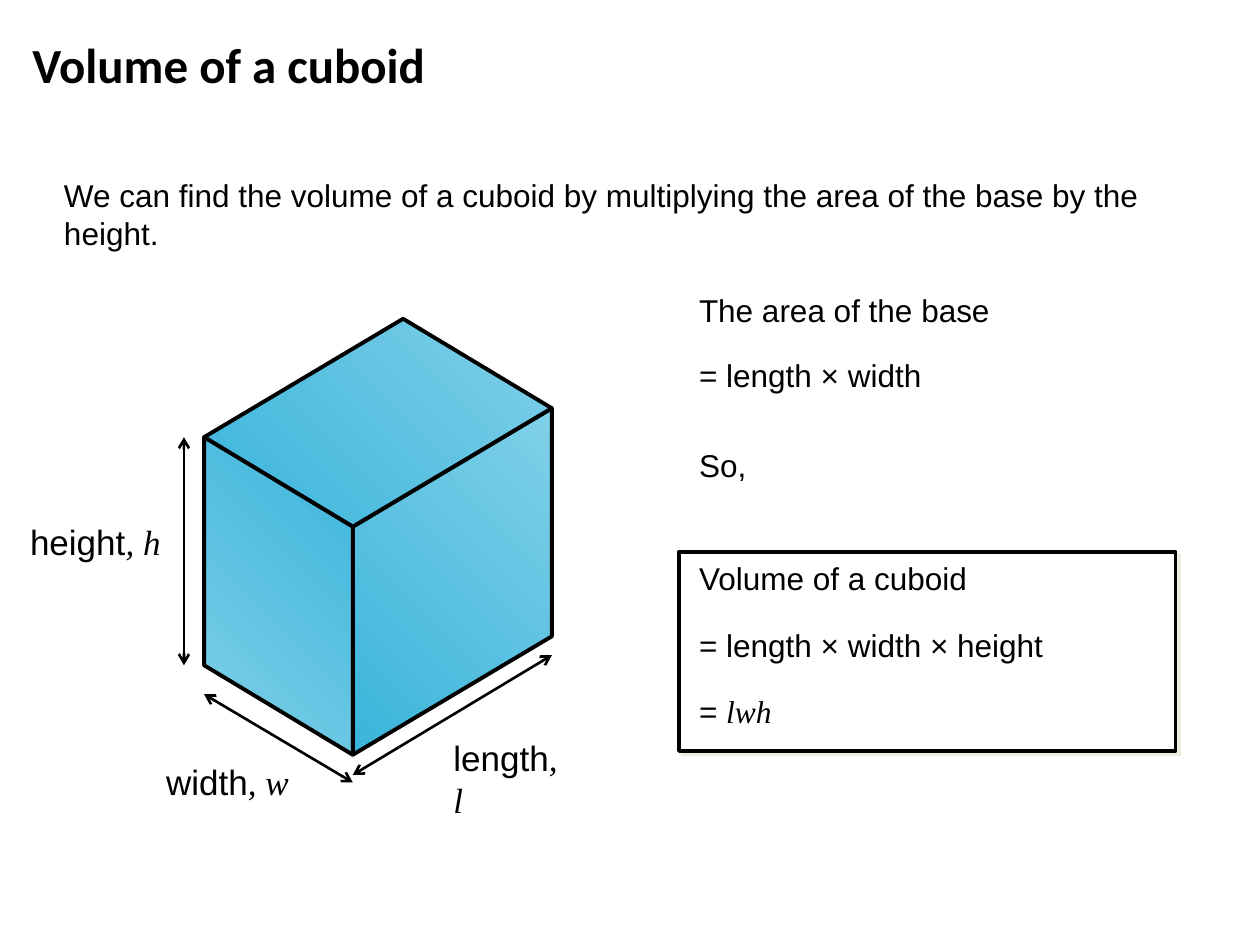
from pptx import Presentation
from pptx.dml.color import RGBColor
from pptx.enum.shapes import MSO_CONNECTOR as Connector, MSO_SHAPE as Shape
from pptx.enum.text import MSO_ANCHOR as Anchor
from pptx.util import Inches, Pt
from lxml.etree import SubElement
from pptx.oxml.ns import qn

COLORS = {"ink": "000000", "paper": "FFFFFF", "shadow": "EEECE1", "deep": "39B4DB", "pale": "80D0E8"}


class CuboidSlide:
    """Holds the style and the current slide, and draws each kind of element."""

    body_font = "Arial"
    math_font = "Times New Roman"
    title_font = "Calibri"

    def __init__(self, presentation):
        self.slide = presentation.slides.add_slide(presentation.slide_layouts[6])

    def color(self, name):
        return RGBColor.from_string(COLORS[name])

    def outline(self, shape, width):
        shape.line.color.rgb = self.color("ink")
        shape.line.width = Pt(width)

    def text(self, box, words, variables="", size=18, font=body_font, bold=False, wrap=True, anchor=Anchor.TOP):
        frame = self.slide.shapes.add_textbox(*map(Inches, box)).text_frame
        frame.word_wrap = wrap
        frame.vertical_anchor = anchor
        paragraph = frame.paragraphs[0]
        for content, face, italic in ((words, font, False), (variables, self.math_font, True)):
            if content:
                run = paragraph.add_run()
                run.text = content
                run.font.name = face
                run.font.size = Pt(size)
                run.font.bold = bold
                run.font.italic = italic
                run.font.color.rgb = self.color("ink")

    def panel(self, box):
        shape = self.slide.shapes.add_shape(Shape.RECTANGLE, *map(Inches, box))
        shape.fill.solid()
        shape.fill.fore_color.rgb = self.color("paper")
        self.outline(shape, 2.25)
        shape.shadow.inherit = False
        effects = shape._element.spPr.find(qn("a:effectLst"))
        shadow = SubElement(effects, qn("a:outerShdw"), dist=str(Pt(2.8)), dir=str(45 * 60000), algn="ctr", rotWithShape="0")
        SubElement(shadow, qn("a:srgbClr"), val=COLORS["shadow"])

    def face(self, corners, start, end):
        points = [(Inches(x), Inches(y)) for x, y in corners]
        builder = self.slide.shapes.build_freeform(*points[0])
        builder.add_line_segments(points[1:], close=True)
        shape = builder.convert_to_shape()
        shape.shadow.inherit = False
        shape.fill.gradient()
        shape.fill.gradient_angle = 45
        for stop, name in zip(shape.fill.gradient_stops, (start, end)):
            stop.color.rgb = self.color(name)
        self.outline(shape, 2.25)

    def dimension(self, start, end):
        line = self.slide.shapes.add_connector(Connector.STRAIGHT, *map(Inches, start + end))
        self.outline(line, 1.5)
        for tag in ("a:headEnd", "a:tailEnd"):
            SubElement(line.line._get_or_add_ln(), qn(tag), type="arrow")
        SubElement(line._element.spPr, qn("a:effectLst"))


def main():
    presentation = Presentation()
    presentation.slide_width = Inches(10)
    presentation.slide_height = Inches(7.5)
    page = CuboidSlide(presentation)

    page.text((0.16, 0.16, 7.2, 0.69), "Volume of a cuboid", size=28, font=page.title_font, bold=True, anchor=Anchor.MIDDLE)
    page.text((0.41, 1.35, 9.23, 0.9), "We can find the volume of a cuboid by multiplying the area of the base by the height.")

    page.panel((5.39, 4.38, 3.94, 1.58))
    working = [
        (4.39, 3.06, "Volume of a cuboid", ""),
        (4.92, 3.84, "= length × width × height", ""),
        (5.44, 0.97, "= ", "lwh"),
        (2.26, 3.37, "The area of the base", ""),
        (2.78, 2.56, "= length × width", ""),
        (3.49, 0.7, "So,", ""),
    ]
    for top, width, words, variables in working:
        page.text((5.45, top, width, 0.5), words, variables)

    height = 1.81
    back, left, front, right = (3.2, 2.53), (1.62, 3.47), (2.8, 4.18), (4.38, 3.24)
    left_base, front_base, right_base = [(x, y + height) for x, y in (left, front, right)]
    page.face([right, front, front_base, right_base], "deep", "pale")
    page.face([back, left, front, right], "deep", "pale")
    page.face([left, left_base, front_base, front], "pale", "deep")

    page.dimension((1.62, 5.51), (2.8, 6.21))
    page.dimension((2.8, 6.15), (4.38, 5.2))
    page.dimension((1.46, 3.47), (1.46, 5.28))
    labels = [
        (0.14, 4.08, 1.24, "height", ", h"),
        (3.5, 5.8, 1.17, "length", ", l"),
        (1.22, 5.99, 1.18, "width", ", w"),
    ]
    for x, y, width, words, variables in labels:
        page.text((x, y, width, 0.43), words, variables, size=20, wrap=False)

    presentation.save("out.pptx")


if __name__ == "__main__":
    main()
